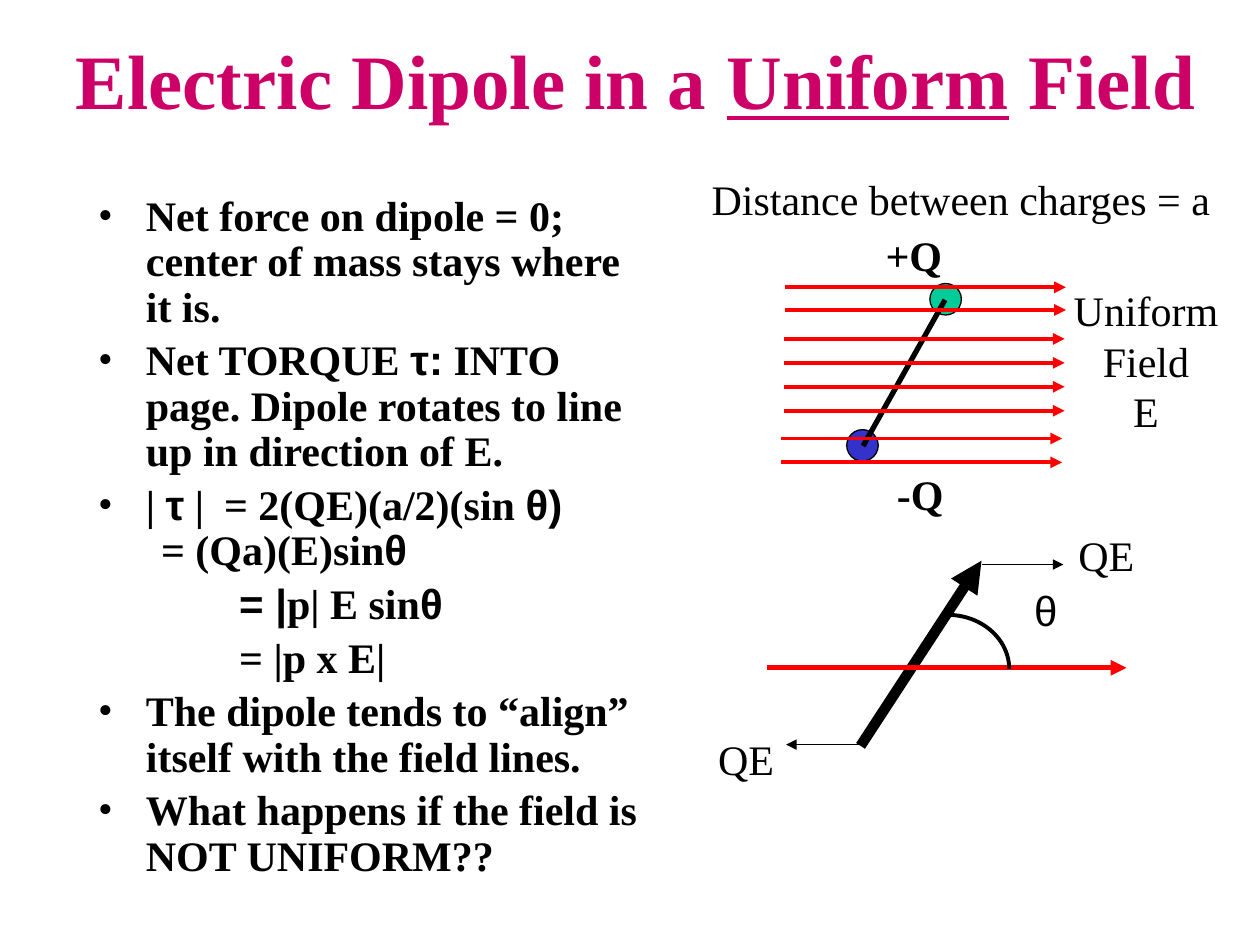
from lxml.etree import SubElement
from pptx import Presentation
from pptx.dml.color import RGBColor
from pptx.enum.shapes import MSO_CONNECTOR as Link, MSO_SHAPE as Kind
from pptx.enum.text import MSO_ANCHOR as Anchor, MSO_AUTO_SIZE as Fit, PP_ALIGN as Align
from pptx.oxml.ns import qn
from pptx.util import Inches, Pt

SERIF, SANS = "Times New Roman", "Arial"
BLACK, RED, PINK = "000000", "FF0000", "CC0066"
GREEN, BLUE = "00CC99", "3333CC"

# Each point: bullet flag, then pieces of text in serif and sans by turns
POINTS = [
    (True, ["Net force on dipole = 0; center of mass stays where it is."]),
    (True, ["Net TORQUE ", "τ:",
            " INTO page. Dipole rotates to line up in direction of E."]),
    (True, ["| ", "τ", " | \t= 2(QE)(a/2)(sin ", "θ)", "\v\t= (Qa)(E)sin", "θ"]),
    (False, ["", "= |", "p| E sin", "θ"]),
    (False, ["= |p x E|"]),
    (True, ["The dipole tends to “align” itself with the field lines."]),
    (True, ["What happens if the field is NOT UNIFORM??"]),
]
FIELD = [(6.23, 2.28), (6.23, 2.46), (6.22, 2.69), (6.22, 2.88),
         (6.22, 3.07), (6.22, 3.26), (6.2, 3.48), (6.2, 3.67)]
LABELS = [
    ("+Q", 6.93, 1.77, 0.65, 0.5, True, SERIF),
    ("-Q", 7.02, 3.67, 0.57, 0.5, True, SERIF),
    ("Uniform\nField\nE", 8.42, 2.21, 1.35, 1.3, False, SERIF),
    ("Distance between charges = a", 5.55, 1.33, 4.16, 0.5, False, SERIF),
    ("θ", 8.11, 4.59, 0.38, 0.5, False, SANS),
    ("QE", 8.46, 4.15, 0.65, 0.5, False, SERIF),
    ("QE", 5.6, 5.77, 0.65, 0.5, False, SERIF),
]


def rgb(code):
    """Turn a hex string into a colour."""
    return RGBColor.from_string(code)


def style(run, face=SERIF, size=24, bold=False, color=BLACK):
    """Format one run."""
    font = run.font
    font.name, font.size, font.bold = face, Pt(size), bold
    font.color.rgb = rgb(color)


def add_title(slide):
    """Fill and place the title."""
    title = slide.shapes.title
    title.left, title.top = Inches(0.42), Inches(0)
    title.width, title.height = Inches(9.25), Inches(1.25)
    frame = title.text_frame
    frame.vertical_anchor = Anchor.MIDDLE
    frame.word_wrap = True
    frame.auto_size = Fit.NONE
    para = frame.paragraphs[0]
    para.alignment = Align.CENTER
    for text in ("Electric Dipole in a ", "Uniform", " Field"):
        run = para.add_run()
        run.text = text
        style(run, size=44, bold=True, color=PINK)
        run.font.underline = text == "Uniform"


def add_point(para, mark, parts):
    """Write one body paragraph, with or without a bullet."""
    para.line_spacing = 0.9
    para.space_before = Pt(4.8)
    props = para._p.get_or_add_pPr()
    props.set("marL", str(Inches(0.38 if mark else 1.12)))
    props.set("indent", str(Inches(-0.38 if mark else 0)))
    if mark:
        SubElement(props, qn("a:buFont"), typeface=SERIF)
        SubElement(props, qn("a:buChar"), char="•")
    for i, text in enumerate(parts):
        if text.startswith("\v"):
            para.add_line_break()
        if text:
            run = para.add_run()
            run.text = text.lstrip("\v")
            style(run, SANS if i % 2 else SERIF, bold=True)


def add_body(slide):
    """Write the list of points."""
    box = slide.shapes.add_textbox(Inches(0.68), Inches(1.5), Inches(4.6), Inches(4.5))
    frame = box.text_frame
    frame.word_wrap = True
    for i, (mark, parts) in enumerate(POINTS):
        para = frame.add_paragraph() if i else frame.paragraphs[0]
        add_point(para, mark, parts)


def add_label(slide, text, x, y, w, h, bold, face):
    """Add a label that does not wrap."""
    box = slide.shapes.add_textbox(Inches(x), Inches(y), Inches(w), Inches(h))
    frame = box.text_frame
    frame.word_wrap = False
    frame.auto_size = Fit.SHAPE_TO_FIT_TEXT
    frame.text = text
    for para in frame.paragraphs:
        if "\n" in text:
            para.alignment = Align.CENTER
        style(para.runs[0], face, bold=bold)


def add_line(slide, x1, y1, x2, y2, color, width, head=True):
    """Draw a line, with an arrowhead at its end unless told not to."""
    line = slide.shapes.add_connector(
        Link.STRAIGHT, Inches(x1), Inches(y1), Inches(x2), Inches(y2))
    line.line.color.rgb = rgb(color)
    line.line.width = Pt(width)
    if head:
        SubElement(line.line._get_or_add_ln(), qn("a:tailEnd"), type="triangle")
    SubElement(line._element.spPr, qn("a:effectLst"))


def add_form(slide, kind, x, y, w, h, width, fill=None):
    """Draw a preset shape with a black outline."""
    form = slide.shapes.add_shape(kind, Inches(x), Inches(y), Inches(w), Inches(h))
    form.shadow.inherit = False
    form.line.color.rgb = rgb(BLACK)
    form.line.width = Pt(width)
    if fill:
        form.fill.solid()
        form.fill.fore_color.rgb = rgb(fill)
    else:
        form.fill.background()


def add_dipole(slide):
    """Draw the two charges in the uniform field."""
    add_form(slide, Kind.OVAL, 7.38, 2.25, 0.25, 0.25, 0.75, GREEN)
    add_form(slide, Kind.OVAL, 6.72, 3.41, 0.25, 0.25, 0.75, BLUE)
    add_line(slide, 7.5, 2.38, 6.85, 3.54, BLACK, 3, head=False)
    for x, y in FIELD:
        add_line(slide, x, y, x + 2.23, y, RED, 2.25)


def add_torque(slide):
    """Draw the forces and the angle to the field."""
    add_line(slide, 6.83, 5.92, 7.79, 4.45, BLACK, 6)
    add_line(slide, 6.09, 5.3, 8.94, 5.3, RED, 3)
    add_form(slide, Kind.ARC, 7.03, 4.88, 0.98, 0.86, 2.25)
    add_line(slide, 7.79, 4.48, 8.44, 4.48, BLACK, 0.75)
    add_line(slide, 6.82, 5.91, 6.24, 5.91, BLACK, 0.75)


def main():
    """Build and save the slide."""
    deck = Presentation()
    deck.slide_width, deck.slide_height = Inches(10), Inches(7.5)
    slide = deck.slides.add_slide(deck.slide_layouts[5])
    add_title(slide)
    add_body(slide)
    add_dipole(slide)
    add_torque(slide)
    for label in LABELS:
        add_label(slide, *label)
    deck.save("out.pptx")


if __name__ == "__main__":
    main()
